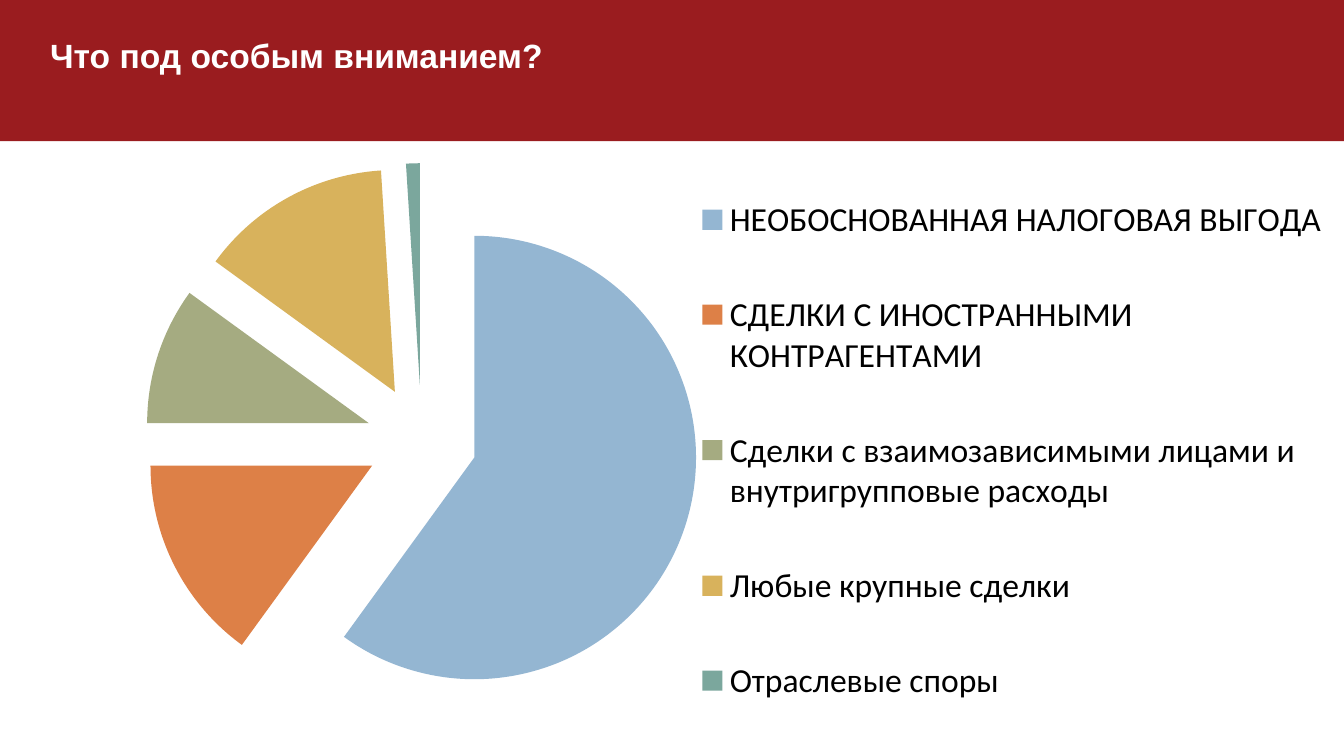
from dataclasses import dataclass

from lxml import etree
from pptx import Presentation
from pptx.chart.chart import Chart
from pptx.chart.data import CategoryChartData
from pptx.dml.color import RGBColor
from pptx.enum.chart import XL_CHART_TYPE, XL_LEGEND_POSITION
from pptx.enum.shapes import MSO_SHAPE
from pptx.oxml.ns import qn
from pptx.slide import Slide
from pptx.util import Pt

PIE = XL_CHART_TYPE.PIE
RIGHT = XL_LEGEND_POSITION.RIGHT
RECT = MSO_SHAPE.RECTANGLE

PX = 4572  # EMU in one px, 200 px to the inch
WIDTH, HEIGHT = 2000, 1125
SIZE = Pt(18)
GAP = 25  # explosion, percent of the radius

RED = RGBColor(0x9A, 0x1C, 0x1F)
WHITE = RGBColor(0xFF, 0xFF, 0xFF)
BLACK = RGBColor(0x00, 0x00, 0x00)
BLUE = RGBColor(0x94, 0xB6, 0xD2)
ORANGE = RGBColor(0xDD, 0x80, 0x47)
OLIVE = RGBColor(0xA5, 0xAB, 0x81)
GOLD = RGBColor(0xD8, 0xB2, 0x5C)
TEAL = RGBColor(0x7B, 0xA7, 0x9D)


@dataclass(frozen=True)
class Box:
    left: int
    top: int
    width: int
    height: int

    def emu(self) -> tuple[int, int, int, int]:
        return (self.left * PX, self.top * PX, self.width * PX, self.height * PX)


@dataclass(frozen=True)
class Slice:
    label: str
    value: int
    color: RGBColor


BAND = Box(0, 0, WIDTH, 210)
TITLE = Box(55, 42, 1166, 80)
CHART = Box(0, 216, 1992, 908)
PLOT = Box(215, 17, 825, 845)  # within the chart
LEGEND = Box(1020, 0, 972, 908)  # within the chart

SLICES = [
    Slice("НЕОБОСНОВАННАЯ НАЛОГОВАЯ ВЫГОДА", 60, BLUE),
    Slice("СДЕЛКИ С ИНОСТРАННЫМИ КОНТРАГЕНТАМИ", 15, ORANGE),
    Slice("Сделки с взаимозависимыми лицами и внутригрупповые расходы", 10, OLIVE),
    Slice("Любые крупные сделки", 14, GOLD),
    Slice("Отраслевые споры", 1, TEAL),
]


def add_band(slide: Slide, box: Box) -> None:
    band = slide.shapes.add_shape(RECT, *box.emu())
    band.shadow.inherit = False
    band.fill.solid()
    band.fill.fore_color.rgb = RED
    band.line.fill.background()


def add_title(slide: Slide, box: Box, text: str) -> None:
    frame = slide.shapes.add_textbox(*box.emu()).text_frame
    frame.word_wrap = True
    run = frame.paragraphs[0].add_run()
    run.text = text
    run.font.name = "Arial"
    run.font.size = SIZE
    run.font.bold = True
    run.font.color.rgb = WHITE


def make_layout(box: Box, inner: bool) -> etree.Element:
    """Build a manual layout, with lengths as shares of the chart."""
    layout = etree.Element(qn("c:layout"))
    manual = etree.SubElement(layout, qn("c:manualLayout"))
    rules = {"layoutTarget": "inner"} if inner else {}
    rules |= {
        "xMode": "edge",
        "yMode": "edge",
        "x": box.left / CHART.width,
        "y": box.top / CHART.height,
        "w": box.width / CHART.width,
        "h": box.height / CHART.height,
    }
    for tag, value in rules.items():
        etree.SubElement(manual, qn(f"c:{tag}")).set("val", str(value))
    return layout


def place_parts(chart: Chart) -> None:
    """Fix the places of the pie and the legend."""
    area = chart.element.find(".//" + qn("c:plotArea"))
    legend = chart.element.find(".//" + qn("c:legend"))
    for part in (area, legend):
        for old in part.findall(qn("c:layout")):
            part.remove(old)
    area.insert(0, make_layout(PLOT, True))
    legend.find(qn("c:legendPos")).addnext(make_layout(LEGEND, False))


def explode(chart: Chart) -> None:
    """Pull all slices apart."""
    gap = etree.Element(qn("c:explosion"))
    gap.set("val", str(GAP))
    chart.element.find(".//" + qn("c:ser")).find(qn("c:tx")).addnext(gap)


def add_pie(slide: Slide, box: Box, slices: list[Slice]) -> None:
    data = CategoryChartData()
    data.categories = [part.label for part in slices]
    data.add_series("Series 1", [part.value for part in slices])
    chart = slide.shapes.add_chart(PIE, *box.emu(), data).chart
    chart.has_title = False
    chart.font.name = "Calibri"
    chart.font.size = SIZE
    chart.font.color.rgb = BLACK
    chart.has_legend = True
    chart.legend.position = RIGHT
    chart.legend.include_in_layout = False

    plot = chart.plots[0]
    plot.vary_by_categories = True
    explode(chart)
    for i, part in enumerate(slices):
        look = plot.series[0].points[i].format
        look.fill.solid()
        look.fill.fore_color.rgb = part.color
        look.line.fill.background()
    place_parts(chart)


def main() -> None:
    deck = Presentation()
    deck.slide_width = WIDTH * PX
    deck.slide_height = HEIGHT * PX
    slide = deck.slides.add_slide(deck.slide_layouts[6])
    add_band(slide, BAND)
    add_title(slide, TITLE, "Что под особым вниманием?")
    add_pie(slide, CHART, SLICES)
    deck.save("out.pptx")


if __name__ == "__main__":
    main()
